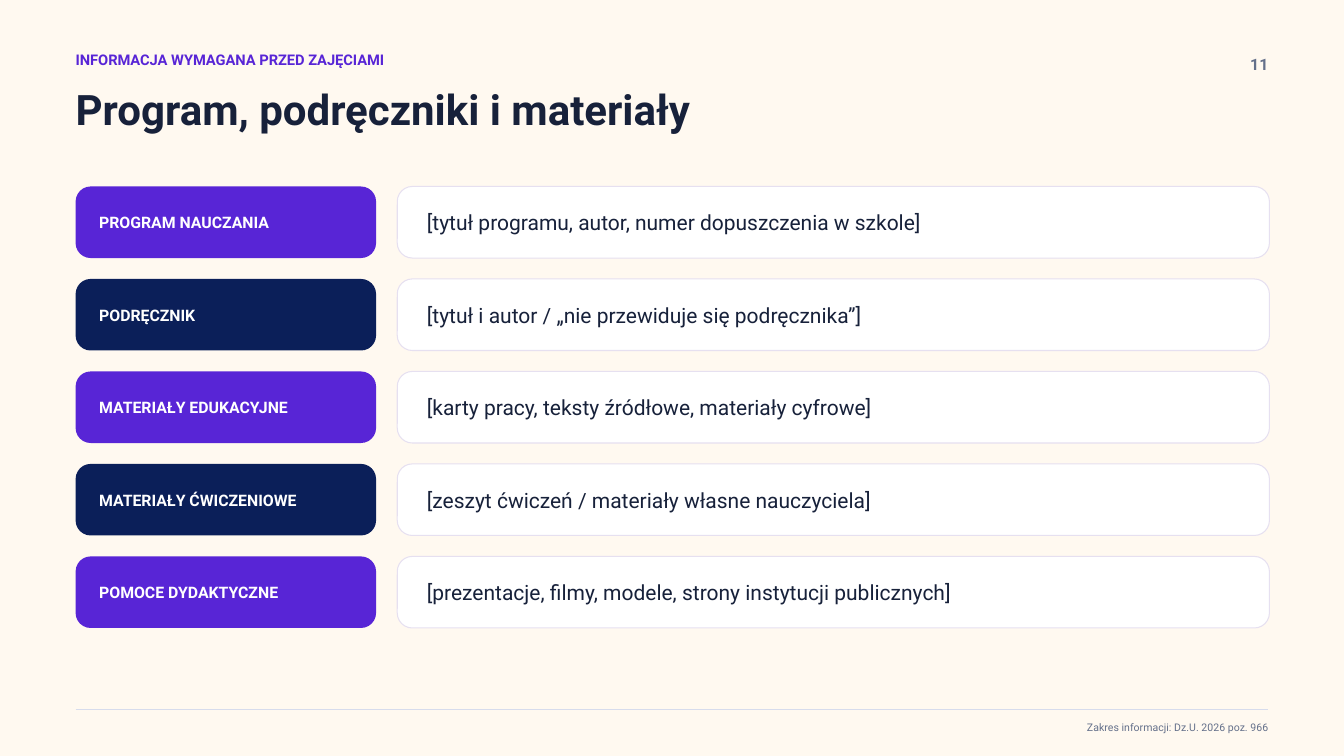
from lxml.etree import SubElement
from pptx import Presentation
from pptx.dml.color import RGBColor
from pptx.enum.shapes import MSO_CONNECTOR, MSO_SHAPE
from pptx.enum.text import MSO_ANCHOR, MSO_AUTO_SIZE, PP_ALIGN
from pptx.oxml.ns import qn
from pptx.util import Inches, Pt

VIOLET, NAVY, INK, GREY, WHITE = "5825D6", "0B1F59", "17213A", "64708A", "FFFFFF"
CARD_BORDER, RULE = "E6E0F0", "D7DCEC"

LEFT, RIGHT = 0.75, 12.58
FIRST_ROW, LAST_ROW, ROW_HEIGHT = 1.85, 5.52, 0.71
LABEL_WIDTH, DETAIL_LEFT, DETAIL_WIDTH = 2.98, 3.94, 8.65

MATERIALS = [
    ("PROGRAM NAUCZANIA", "[tytuł programu, autor, numer dopuszczenia w szkole]"),
    ("PODRĘCZNIK", "[tytuł i autor / „nie przewiduje się podręcznika”]"),
    ("MATERIAŁY EDUKACYJNE", "[karty pracy, teksty źródłowe, materiały cyfrowe]"),
    ("MATERIAŁY ĆWICZENIOWE", "[zeszyt ćwiczeń / materiały własne nauczyciela]"),
    ("POMOCE DYDAKTYCZNE", "[prezentacje, filmy, modele, strony instytucji publicznych]"),
]


def color(hex_code):
    return RGBColor.from_string(hex_code)


def apply(target, values):
    for name, value in values.items():
        setattr(target, name, value)


class SlideBuilder:
    font_name = "Roboto"

    def __init__(self, slide, background):
        self.slide = slide
        slide.background.fill.solid()
        slide.background.fill.fore_color.rgb = color(background)

    def fill_text(self, holder, words, size, hex_code, bold=False,
                  align=PP_ALIGN.LEFT, anchor=MSO_ANCHOR.TOP, indent=0):
        frame = holder.text_frame
        apply(frame, {
            "text": words, "word_wrap": True, "auto_size": MSO_AUTO_SIZE.NONE,
            "vertical_anchor": anchor, "margin_left": Inches(indent),
            "margin_right": 0, "margin_top": 0, "margin_bottom": 0,
        })
        paragraph = frame.paragraphs[0]
        paragraph.alignment = align
        apply(paragraph.font, {"name": self.font_name, "size": Pt(size), "bold": bold})
        paragraph.font.color.rgb = color(hex_code)

    def title(self, box, words, size, hex_code):
        heading = self.slide.shapes.title
        apply(heading, dict(zip(("left", "top", "width", "height"), map(Inches, box))))
        self.fill_text(heading, words, size, hex_code, bold=True)

    def text(self, box, words, size, hex_code, **style):
        holder = self.slide.shapes.add_textbox(*map(Inches, box))
        self.fill_text(holder, words, size, hex_code, **style)

    def card(self, box, fill, words, size, hex_code, border=None, **style):
        panel = self.slide.shapes.add_shape(MSO_SHAPE.ROUNDED_RECTANGLE, *map(Inches, box))
        panel.adjustments[0] = 0.21
        panel.shadow.inherit = False
        panel.fill.solid()
        panel.fill.fore_color.rgb = color(fill)
        if border:
            panel.line.color.rgb = color(border)
            panel.line.width = Pt(0.75)
        else:
            panel.line.fill.background()
        self.fill_text(panel, words, size, hex_code, anchor=MSO_ANCHOR.MIDDLE, **style)

    def rule(self, left, right, top, hex_code):
        divider = self.slide.shapes.add_connector(
            MSO_CONNECTOR.STRAIGHT, *map(Inches, (left, top, right, top)))
        divider.line.color.rgb = color(hex_code)
        divider.line.width = Pt(0.75)
        SubElement(divider._element.spPr, qn("a:effectLst"))


def main():
    deck = Presentation()
    deck.slide_width, deck.slide_height = Inches(13.33), Inches(7.5)
    page = SlideBuilder(deck.slides.add_slide(deck.slide_layouts[5]), "FFF9F0")

    page.text((LEFT, 0.5, 7.29, 0.25), "INFORMACJA WYMAGANA PRZED ZAJĘCIAMI",
              10.5, VIOLET, bold=True)
    page.title((LEFT, 0.83, 10.83, 0.81), "Program, podręczniki i materiały", 30, INK)
    page.text((RIGHT - 0.5, 0.54, 0.5, 0.27), "11", 11.3, GREY,
              bold=True, align=PP_ALIGN.RIGHT)

    row_step = (LAST_ROW - FIRST_ROW) / (len(MATERIALS) - 1)
    for row, (label, detail) in enumerate(MATERIALS):
        top = FIRST_ROW + row * row_step
        page.card((LEFT, top, LABEL_WIDTH, ROW_HEIGHT), (VIOLET, NAVY)[row % 2],
                  label, 11.3, WHITE, bold=True, indent=0.19)
        page.card((DETAIL_LEFT, top, DETAIL_WIDTH, ROW_HEIGHT), WHITE,
                  detail, 15, INK, border=CARD_BORDER, indent=0.25)

    page.rule(LEFT, RIGHT, 7.04, RULE)
    page.text((RIGHT - 7.27, 7.15, 7.27, 0.19), "Zakres informacji: Dz.U. 2026 poz. 966",
              7.5, GREY, align=PP_ALIGN.RIGHT)
    deck.save("out.pptx")


if __name__ == "__main__":
    main()
